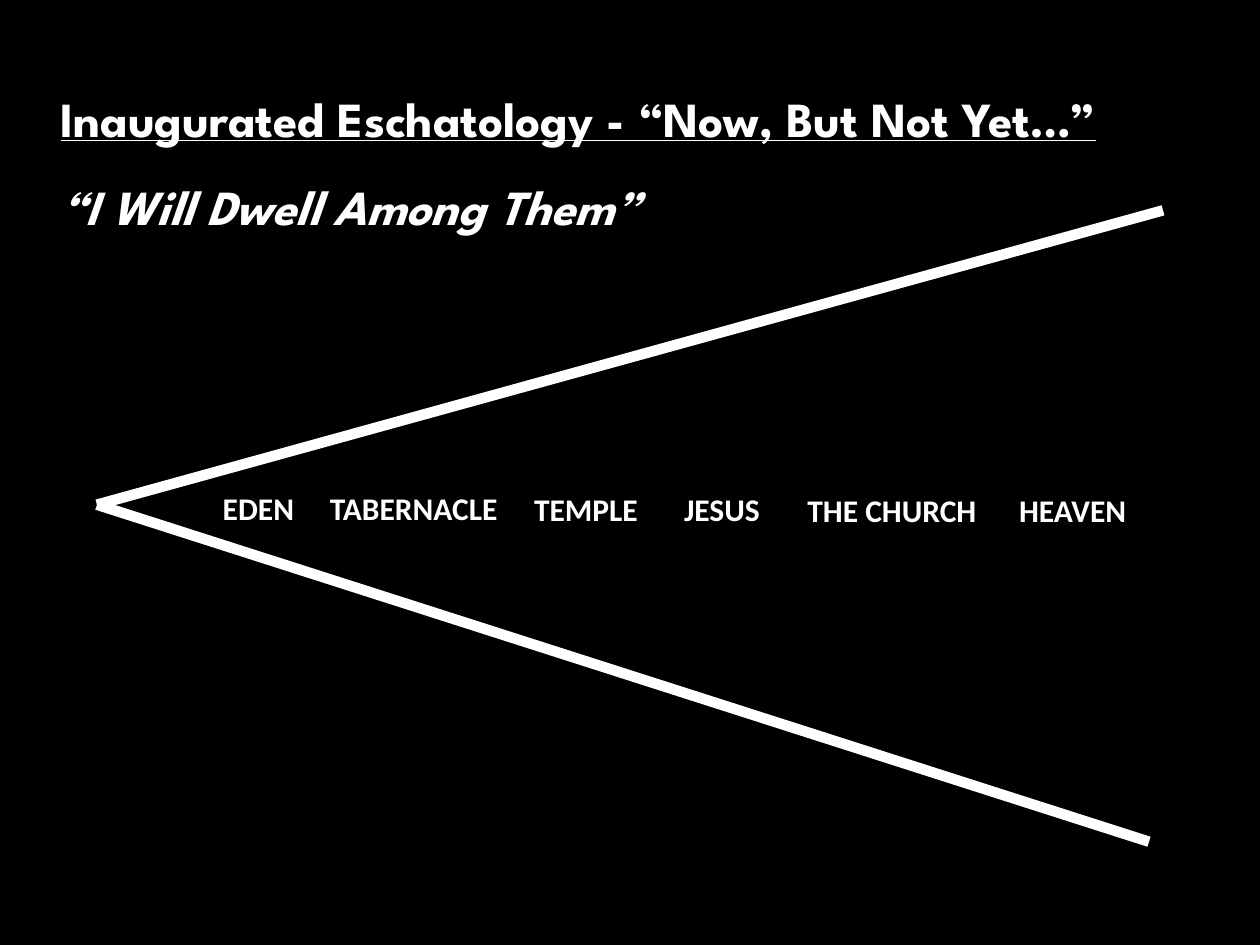
from dataclasses import dataclass

from lxml.etree import SubElement
from pptx import Presentation
from pptx.dml.color import RGBColor
from pptx.enum.shapes import MSO_CONNECTOR
from pptx.enum.text import MSO_ANCHOR, MSO_AUTO_SIZE, PP_ALIGN
from pptx.oxml.ns import qn
from pptx.util import Pt


@dataclass(frozen=True)
class Theme:
    background: RGBColor = RGBColor(0, 0, 0)
    ink: RGBColor = RGBColor(255, 255, 255)
    title_font: str = "League Spartan"
    label_font: str = "Calibri"
    title_size: float = 28
    label_size: float = 18
    line_width: float = 6


@dataclass(frozen=True)
class Stage:
    name: str
    left: float
    top: float
    width: float = 116


@dataclass(frozen=True)
class Point:
    x: float
    y: float


THEME = Theme()
LABEL_HEIGHT = 28.8
APEX = Point(55.4, 288.4)
RAY_ENDS = (Point(664.6, 120.2), Point(656.6, 481))
STAGES = (
    Stage("EDEN", 120.2, 275.8, 61.2),
    Stage("TABERNACLE", 181.4, 275.8),
    Stage("TEMPLE", 298.1, 276.5),
    Stage("JESUS", 383.8, 276.5),
    Stage("THE CHURCH", 454.3, 277.2),
    Stage("HEAVEN", 575.3, 277.2),
)


def style_font(font, name: str, size: float) -> None:
    font.name = name
    font.size = Pt(size)
    font.bold = True
    font.color.rgb = THEME.ink


def fill_title(title) -> None:
    title.left, title.top = Pt(27.4), Pt(23.8)
    title.width, title.height = Pt(663.8), Pt(120.2)
    frame = title.text_frame
    frame.word_wrap = True
    frame.auto_size = MSO_AUTO_SIZE.NONE
    frame.vertical_anchor = MSO_ANCHOR.MIDDLE
    para = frame.paragraphs[0]
    para.alignment = PP_ALIGN.LEFT
    para.line_spacing = 1.5
    style_font(para.font, THEME.title_font, THEME.title_size)
    heading = para.add_run()
    heading.text = "Inaugurated Eschatology - “Now, But Not Yet…”"
    heading.font.underline = True
    para.add_line_break()
    quotation = para.add_run()
    quotation.text = "“I Will Dwell Among Them”"
    quotation.font.italic = True


def add_ray(page, end: Point) -> None:
    ray = page.shapes.add_connector(
        MSO_CONNECTOR.STRAIGHT, Pt(APEX.x), Pt(APEX.y), Pt(end.x), Pt(end.y)
    )
    ray.line.color.rgb = THEME.ink
    ray.line.width = Pt(THEME.line_width)
    SubElement(ray._element.spPr, qn("a:effectLst"))


def add_stage(page, stage: Stage) -> None:
    box = page.shapes.add_textbox(
        Pt(stage.left), Pt(stage.top), Pt(stage.width), Pt(LABEL_HEIGHT)
    )
    frame = box.text_frame
    frame.word_wrap = True
    frame.auto_size = MSO_AUTO_SIZE.SHAPE_TO_FIT_TEXT
    para = frame.paragraphs[0]
    para.text = stage.name
    style_font(para.font, THEME.label_font, THEME.label_size)


def main() -> None:
    deck = Presentation()
    deck.slide_width, deck.slide_height = Pt(720), Pt(540)
    title_only = deck.slide_layouts[5]
    page = deck.slides.add_slide(title_only)
    page.background.fill.solid()
    page.background.fill.fore_color.rgb = THEME.background
    fill_title(page.shapes.title)
    for end in RAY_ENDS:
        add_ray(page, end)
    for stage in STAGES:
        add_stage(page, stage)
    deck.save("out.pptx")


if __name__ == "__main__":
    main()
